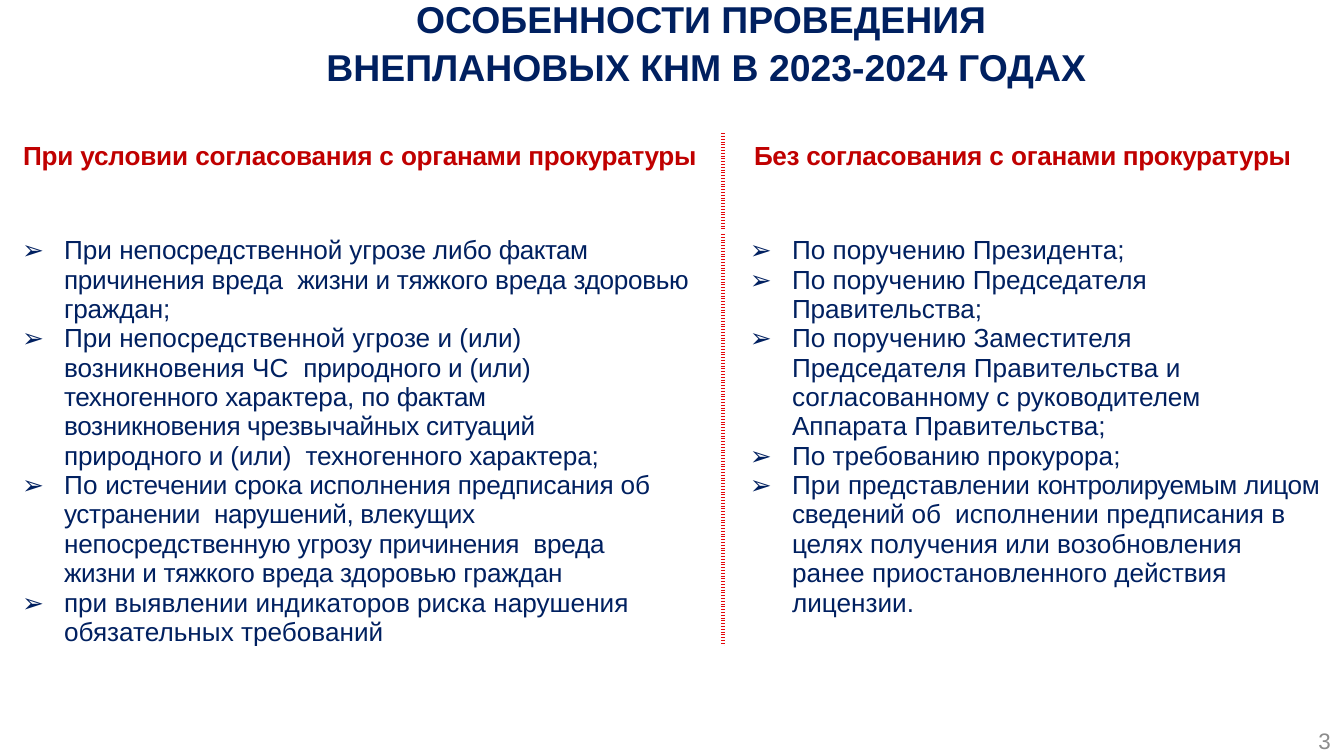
from pptx import Presentation
from pptx.util import Pt
from pptx.dml.color import RGBColor
from pptx.enum.text import PP_ALIGN, MSO_ANCHOR
from pptx.oxml import parse_xml
from pptx.oxml.ns import nsdecls

NAVY, RED, LINE, GREY = "002060", "C00000", "E4070B", "8C8C8C"
TITLE = "ОСОБЕННОСТИ ПРОВЕДЕНИЯ \vВНЕПЛАНОВЫХ КНМ В 2023-2024 ГОДАХ"
NUMBER = "3"

COLS = [
    {"width": 719, "head": 19, "left": 60, "edge": "lnR",
     "name": [("При условии ", -10), ("согласования с ", -15),
              ("органами прокуратуры", -20)],
     "items": [
         (20, [("При ", 0), ("непосредственной угрозе либо ", -10),
               ("фактам ", -30), ("причинения ", -20), ("вреда  ", -10),
               ("жизни и тяжкого ", -20), ("вреда ", -10),
               ("здоровью ", -20), ("граждан;", -10)]),
         (93, [("При непосредственной угрозе и (или) возникновения ЧС  ", 0),
               ("природного и (или) ", -10), ("техногенного ", -20),
               ("характера, по ", -10), ("фактам ", -30),
               ("возникновения чрезвычайных ситуаций ", -20),
               ("природного и (или)  ", -10),
               ("техногенного характера;", -8)]),
         (56, [("По ", 10), ("истечении ", -20),
               ("срока исполнения предписания об ", -10),
               ("устранении  нарушений, влекущих ", -20),
               ("непосредственную ", -10), ("угрозу причинения  ", -20),
               ("вреда ", -10), ("жизни и тяжкого ", -20),
               ("вреда здоровью граждан", -10)]),
         (56, [("при выявлении индикаторов риска нарушения "
                "обязательных требований", 0)]),
     ]},
    {"width": 615, "head": 31, "left": 69, "edge": "lnL",
     "name": [("Без согласования ", -20), ("с ", 0),
              ("оганами прокуратуры", -20)],
     "items": [
         (30, [("По поручению Президента;", 0)]),
         (30, [("По поручению Председателя ", 0), ("Правительства;", -7)]),
         (88, [("По поручению Заместителя Председателя Правительства и ", 2),
               ("согласованному с руководителем ", -4),
               ("Аппарата Правительства;", 0)]),
         (30, [("По требованию прокурора;", 0)]),
         (16, [("При ", 10), ("представлении ", -10),
               ("контролируемым ", -30), ("лицом ", -20),
               ("сведений об  ", -10),
               ("исполнении предписания в целях получения или "
                "возобновления ранее ", 1),
               ("приостановленного ", -6), ("действия лицензии.", 0)]),
     ]},
]
ROWS = [98, 415]
HANG = 42

SCALE = 9144000 / 1344


def px(n):
    return round(n * SCALE)


def color(code):
    return RGBColor.from_string(code)


def write(para, parts, ink, size, bold=False):
    for text, gap in parts:
        run = para.add_run()
        run.text = text
        look = {"name": "Arial", "size": Pt(size), "bold": bold}
        for key, val in look.items():
            setattr(run.font, key, val)
        run.font.color.rgb = color(ink)
        if gap:
            run.font._element.set("spc", str(gap))


def indent(para, left, right=0, hang=0):
    props = para._p.get_or_add_pPr()
    sizes = {"marL": left, "marR": right, "indent": -hang}
    for key, val in sizes.items():
        props.set(key, str(px(val)))
    if hang:
        props.append(parse_xml(f'<a:buFont {nsdecls("a")} typeface="Arial"/>'))
        props.append(parse_xml(f'<a:buChar {nsdecls("a")} char="➢"/>'))


def clear(cell, edge, top):
    sides = {"margin_left": 0, "margin_right": 0,
             "margin_top": px(top), "margin_bottom": 0}
    for key, val in sides.items():
        setattr(cell, key, val)
    cell.fill.background()
    cell._tc.get_or_add_tcPr().insert(0, parse_xml(
        f'<a:{edge} {nsdecls("a")} w="{Pt(3)}"><a:solidFill>'
        f'<a:srgbClr val="{LINE}"/></a:solidFill>'
        f'<a:prstDash val="sysDot"/></a:{edge}>'))


def place(shape, box):
    for key, val in zip(("left", "top", "width", "height"), box):
        setattr(shape, key, px(val))


def main():
    deck = Presentation()
    deck.slide_width, deck.slide_height = px(1344), px(756)
    slide = deck.slides.add_slide(deck.slide_layouts[5])

    title = slide.shapes.title
    place(title, (69, 0, 1275, 82))
    frame = title.text_frame
    form = {"margin_left": 0, "margin_right": 0, "margin_top": 0,
            "margin_bottom": 0, "word_wrap": True,
            "vertical_anchor": MSO_ANCHOR.MIDDLE}
    for key, val in form.items():
        setattr(frame, key, val)
    frame.text = TITLE
    para = frame.paragraphs[0]
    para.alignment, para.line_spacing = PP_ALIGN.CENTER, 1.07
    for run in para.runs:
        look = {"name": "Arial", "size": Pt(20), "bold": True}
        for key, val in look.items():
            setattr(run.font, key, val)
        run.font.color.rgb = color(NAVY)

    wide = sum(col["width"] for col in COLS)
    grid = slide.shapes.add_table(
        len(ROWS), len(COLS), px(4), px(134), px(wide), px(sum(ROWS))).table
    grid.first_row = grid.horz_banding = False
    for row, high in zip(grid.rows, ROWS):
        row.height = px(high)
    for i, col in enumerate(COLS):
        grid.columns[i].width = px(col["width"])
        head, body = grid.cell(0, i), grid.cell(1, i)
        clear(head, col["edge"], 0)
        clear(body, col["edge"], 4)
        para = head.text_frame.paragraphs[0]
        indent(para, col["head"])
        para.line_spacing = Pt(19.9)
        write(para, col["name"], RED, 14, True)
        for j, (right, parts) in enumerate(col["items"]):
            text = body.text_frame
            para = text.add_paragraph() if j else text.paragraphs[0]
            indent(para, col["left"], right, HANG)
            write(para, parts, NAVY, 14)

    box = slide.shapes.add_textbox(px(1254), px(727), px(90), px(28))
    frame = box.text_frame
    frame.word_wrap = True
    frame.vertical_anchor = MSO_ANCHOR.MIDDLE
    para = frame.paragraphs[0]
    para.alignment = PP_ALIGN.RIGHT
    write(para, [(NUMBER, 0)], GREY, 12)
    deck.save("out.pptx")


if __name__ == "__main__":
    main()
